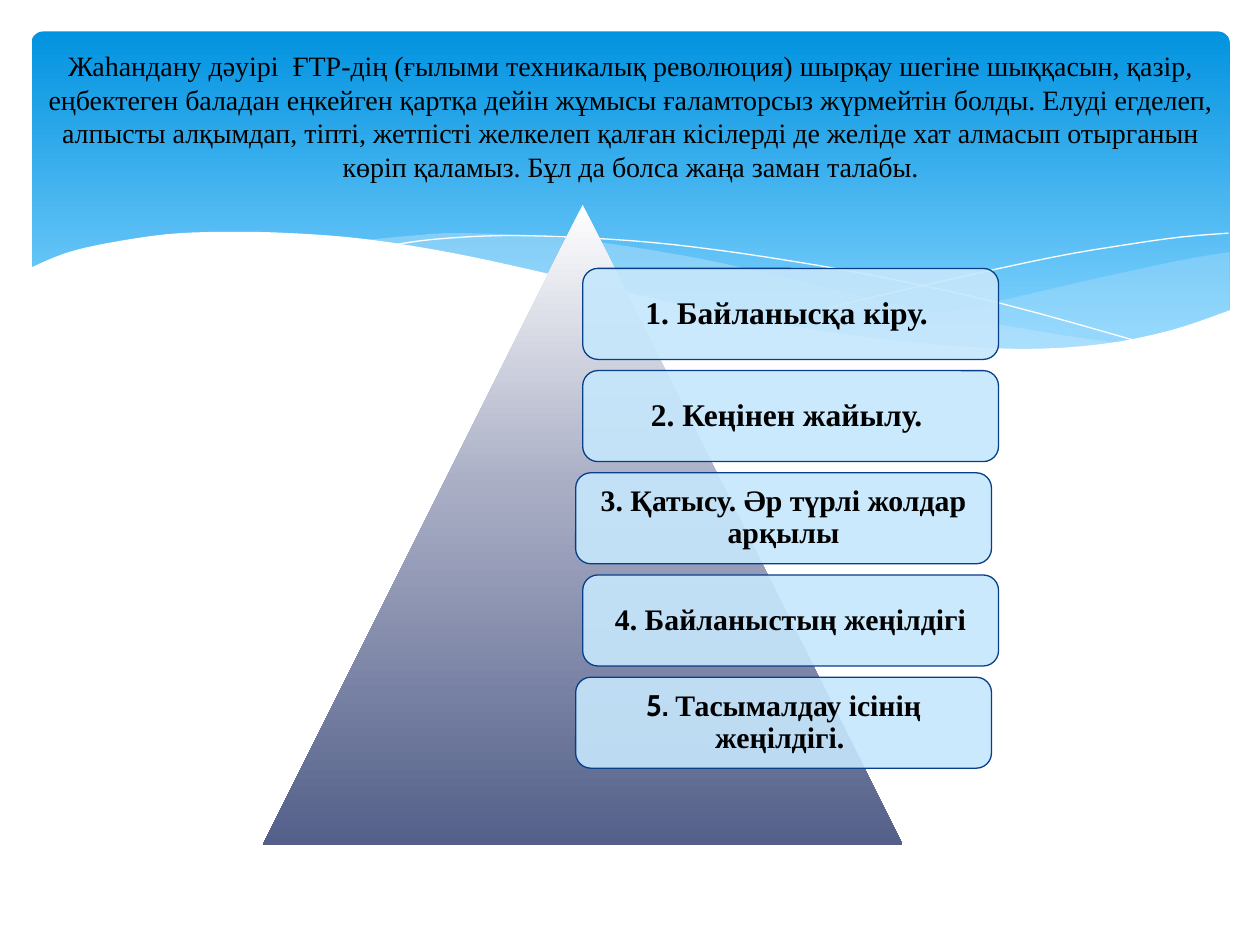
import copy
from dataclasses import dataclass

import lxml.etree
import pptx
import pptx.dml.color
import pptx.enum.shapes
import pptx.enum.text
import pptx.oxml.ns
import pptx.util

Pt = pptx.util.Pt
SHAPES = pptx.enum.shapes.MSO_SHAPE
COLOURS = {
    "sky_top": "0293E0", "sky_low": "83D3FE", "ice": "C6E7FC", "white": "FFFFFF",
    "mist": "A9AEC5", "slate": "54608A", "navy": "073E87", "black": "000000",
}
SERIF = "Times New Roman"
TITLE = (
    "Жаһандану дәуірі  ҒТР-дің (ғылыми техникалық революция) шырқау шегіне шыққасын, "
    "қазір, еңбектеген баладан еңкейген қартқа дейін жұмысы ғаламторсыз жүрмейтін болды. "
    "Елуді егделеп, алпысты алқымдап, тіпті, жетпісті желкелеп қалған кісілерді де желіде "
    "хат алмасып отырганын көріп қаламыз. Бұл да болса жаңа заман талабы."
)


@dataclass
class Wave:
    curves: list
    colour: str
    opacity: int = 100
    filled: bool = True
    corners: tuple = ()


@dataclass
class Step:
    runs: list
    size: int
    left: float = 333


WAVES = [
    Wave([
        [(702.7, 144), (673.2, 149), (619.9, 160.6), (560.9, 174.2), (508.3, 185),
         (475.9, 190.8)],
        [(475.9, 190.8), (507.6, 195.1), (545, 198.7), (586.1, 200.2), (627.8, 197.3),
         (663.1, 190.8), (702.7, 177.8)],
    ], "ice", 29),
    Wave([
        [(643, 196.6), (602.6, 190.8), (558, 182.9), (508.3, 172.8), (452.9, 159.8),
         (409.7, 149.8), (370.1, 142.6), (334.8, 137.5), (302.4, 134.6), (259.9, 133.2),
         (236.2, 134.6), (205.9, 137.5)],
        [(205.9, 137.5), (246.2, 143.3), (290.9, 151.9), (323.3, 159.8), (381.6, 172.8),
         (432.7, 183.6), (478.8, 191.5), (519.8, 197.3), (556.6, 199.4), (589, 200.2),
         (617, 199.4), (643, 196.6)],
    ], "ice", 40),
    Wave([
        [(222.5, 140.4), (247.7, 136.8), (288.7, 134.6), (337.7, 136.1), (383.8, 139.7),
         (437.8, 146.9), (500.4, 157.7), (572.4, 173.5), (653, 195.8)],
    ], "white", filled=False),
    Wave([
        [(441.4, 185), (483.8, 173.5), (538.6, 160.6), (601.9, 146.9), (644.4, 139.7),
         (675.4, 135.4), (702, 133.2)],
    ], "white", filled=False),
    Wave([
        [(703.4, 177.1), (669.6, 188.6), (630, 196.6), (582.5, 199.4), (522.7, 195.8),
         (466.6, 188.6), (399.6, 176.4), (321.8, 158.4), (262.8, 145.4), (210.2, 136.8),
         (165.6, 133.2), (127.4, 132.5), (95, 133.9), (61.2, 139), (37.4, 144.7),
         (16.6, 153.4)],
    ], "white", corners=((16.6, 236.9), (703.4, 236.9))),
]
STEPS = [
    Step([("1. Байланысқа кіру. ", SERIF)], 18),
    Step([("2. Кеңінен жайылу. ", SERIF)], 18),
    Step([("3. Қатысу. Әр түрлі жолдар арқылы", SERIF)], 17, 329),
    Step([("4. Байланыстың жеңілдігі", SERIF)], 17),
    Step([("5. ", "Cabin"), ("Тасымалдау ісінің жеңілдігі. ", SERIF)], 17, 329),
]
STEP_TOP, STEP_PITCH = 153.4, 58.4


def colour(name: str) -> pptx.dml.color.RGBColor:
    return pptx.dml.color.RGBColor.from_string(COLOURS[name])


def set_format(target, values: dict) -> None:
    for name, value in values.items():
        setattr(target, name, value)


def fill_solid(shape, name: str, opacity: int = 100) -> None:
    shape.fill.solid()
    shape.fill.fore_color.rgb = colour(name)
    if opacity < 100:
        tag = pptx.oxml.ns.qn("a:srgbClr")
        node = next(shape._element.spPr.iter(tag))
        alpha = lxml.etree.SubElement(node, pptx.oxml.ns.qn("a:alpha"))
        alpha.set("val", str(opacity * 1000))


def fill_gradient(shape, stops: list) -> None:
    shape.fill.gradient()
    shape.fill.gradient_angle = 270
    stop_list = next(shape._element.spPr.iter(pptx.oxml.ns.qn("a:gsLst")))
    for _ in stops[2:]:
        stop_list.append(copy.deepcopy(stop_list[-1]))
    for stop, (position, name) in zip(shape.fill.gradient_stops, stops):
        stop.position = position
        stop.color.rgb = colour(name)


def add_preset(slide, kind, left: float, top: float, width: float, height: float):
    shape = slide.shapes.add_shape(kind, Pt(left), Pt(top), Pt(width), Pt(height))
    shape.shadow.inherit = False
    shape.line.fill.background()
    return shape


def smooth(knots: list, pieces: int = 4) -> list:
    padded = [knots[0], *knots, knots[-1]]
    points = [knots[0]]
    for a, b, c, d in zip(padded, padded[1:], padded[2:], padded[3:]):
        for piece in range(1, pieces + 1):
            t = piece / pieces
            points.append(tuple(
                q + 0.5 * t * (r - p + t * (2 * p - 5 * q + 4 * r - s + t * (3 * (q - r) + s - p)))
                for p, q, r, s in zip(a, b, c, d)
            ))
    return points


def draw_wave(slide, wave: Wave) -> None:
    points = [point for curve in wave.curves for point in smooth(curve)]
    points += wave.corners
    lengths = [(Pt(x), Pt(y)) for x, y in points]
    builder = slide.shapes.build_freeform(*lengths[0])
    builder.add_line_segments(lengths[1:], close=wave.filled)
    shape = builder.convert_to_shape()
    shape.shadow.inherit = False
    if wave.filled:
        fill_solid(shape, wave.colour, wave.opacity)
        shape.line.fill.background()
    else:
        shape.fill.background()
        shape.line.color.rgb = colour(wave.colour)
        shape.line.width = Pt(0)


def write_text(box, runs: list, size: int, bold: bool, frame: dict, line_spacing: float) -> None:
    set_format(box.text_frame, {
        "word_wrap": True,
        "auto_size": pptx.enum.text.MSO_AUTO_SIZE.NONE,
        "vertical_anchor": pptx.enum.text.MSO_ANCHOR.MIDDLE,
        **frame,
    })
    para = box.text_frame.paragraphs[0]
    set_format(para, {"alignment": pptx.enum.text.PP_ALIGN.CENTER, "line_spacing": line_spacing})
    for text, font in runs:
        span = para.add_run()
        span.text = text
        set_format(span.font, {"name": font, "size": Pt(size), "bold": bold})
        span.font.color.rgb = colour("black")


def draw_step(slide, step: Step, top: float) -> None:
    box = add_preset(slide, SHAPES.ROUNDED_RECTANGLE, step.left, top, 237.6, 52)
    fill_solid(box, "ice", 90)
    box.line.color.rgb = colour("navy")
    box.line.width = Pt(0.75)
    sides = ("left", "top", "right", "bottom")
    write_text(box, step.runs, step.size, True, {f"margin_{side}": Pt(5) for side in sides}, 0.9)


def main() -> None:
    deck = pptx.Presentation()
    set_format(deck, {"slide_width": Pt(720), "slide_height": Pt(540)})
    page = deck.slides.add_slide(deck.slide_layouts[5])

    sky = add_preset(page, SHAPES.ROUNDED_RECTANGLE, 18, 18, 684.7, 194.4)
    sky.adjustments[0] = 0.034
    fill_gradient(sky, [(0, "sky_top"), (0.9, "sky_low")])
    for wave in WAVES:
        draw_wave(page, wave)

    pyramid = add_preset(page, SHAPES.ISOSCELES_TRIANGLE, 150.2, 117, 365.6, 365.6)
    fill_gradient(pyramid, [(0, "white"), (0.44, "mist"), (1, "slate")])
    for index, step in enumerate(STEPS):
        draw_step(page, step, STEP_TOP + index * STEP_PITCH)

    title = page.shapes.title
    set_format(title, {"left": Pt(20.2), "top": Pt(26.6), "width": Pt(680.4), "height": Pt(98.6)})
    write_text(title, [(TITLE, SERIF)], 16, False, {"margin_bottom": Pt(23)}, 1)
    page.shapes._spTree.append(title._element)

    deck.save("out.pptx")


if __name__ == "__main__":
    main()
